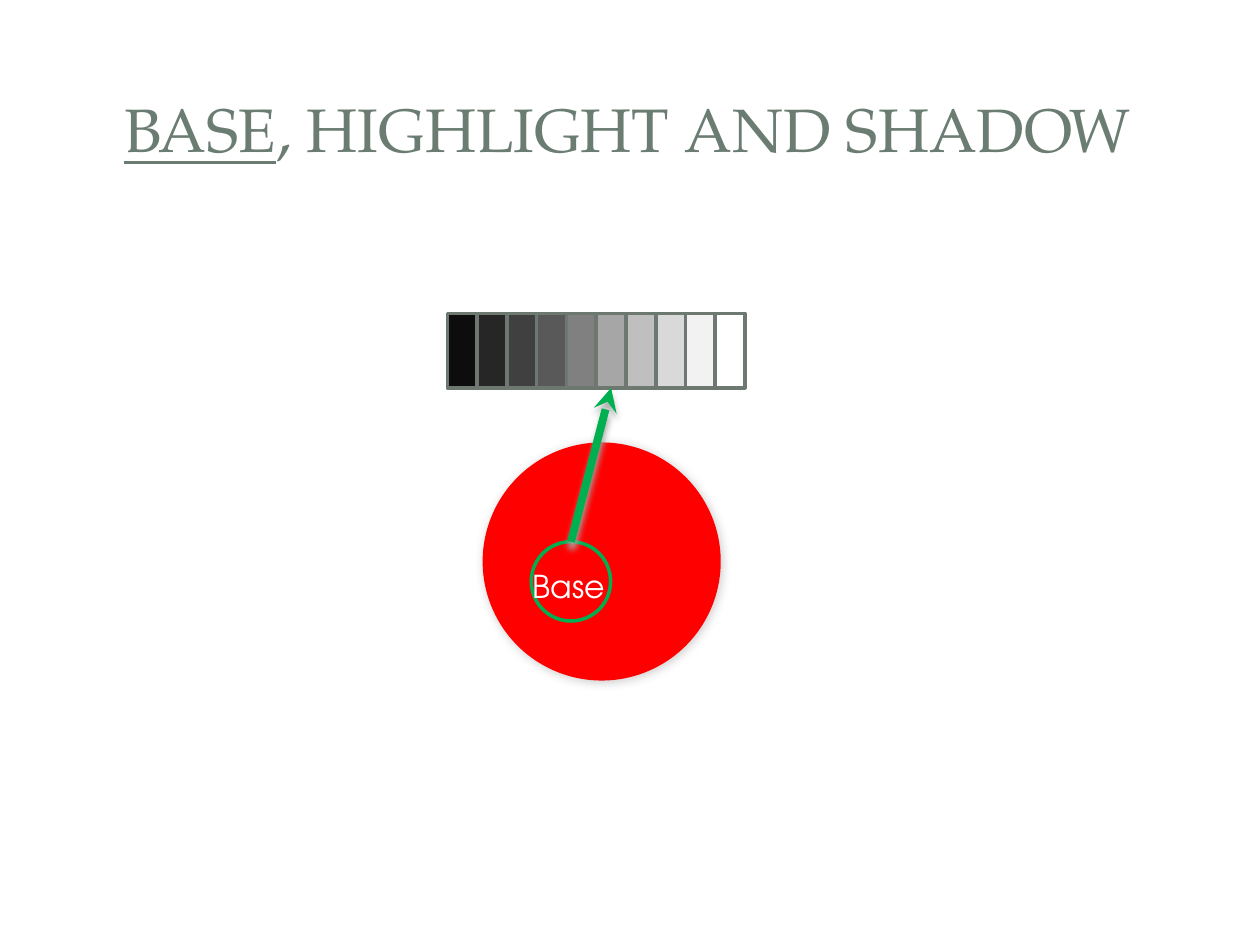
from lxml.etree import SubElement
from pptx import Presentation
from pptx.dml.color import RGBColor
from pptx.enum.shapes import MSO_CONNECTOR, MSO_SHAPE
from pptx.enum.text import MSO_ANCHOR, MSO_AUTO_SIZE, PP_ALIGN
from pptx.oxml.ns import qn
from pptx.util import Cm, Pt


def paint(color, code):
    color.rgb = RGBColor.from_string(code)


def write(para, text, font, size, code, under=False):
    run = para.add_run()
    run.text = text
    run.font.name = font
    run.font.size = Pt(size)
    run.font.underline = under
    paint(run.font.color, code)


GREEN = "00B050"
prs = Presentation()
prs.slide_width, prs.slide_height = Cm(25.4), Cm(19.05)
slide = prs.slides.add_slide(prs.slide_layouts[5])
shapes = slide.shapes

# Title
title = shapes.title
title.left, title.top, title.width, title.height = Cm(1.19), Cm(1.14), Cm(22.94), Cm(2.9)
title.text_frame.vertical_anchor = MSO_ANCHOR.MIDDLE
para = title.text_frame.paragraphs[0]
para.alignment = PP_ALIGN.CENTER
for text, under in (("BASE", True), (", HIGHLIGHT AND SHADOW", False)):
    write(para, text, font="TeX Gyre Pagella", size=35, code="6B7D72", under=under)

# Red ball
ball = shapes.add_shape(MSO_SHAPE.OVAL, Cm(9.73), Cm(8.92), Cm(4.8), Cm(4.8))
ball.shadow.inherit = False
ball.fill.solid()
paint(ball.fill.fore_color, "FF0000")
ball.line.fill.background()

# Value scale from dark to light
scale = shapes.add_group_shape()
tones = ["0D0D0D", "262626", "404040", "595959", "808080",
         "A6A6A6", "BFBFBF", "D9D9D9", "F2F2F2", "FFFFFF"]
cells = []
for i, tone in enumerate(tones):
    cell = scale.shapes.add_shape(MSO_SHAPE.RECTANGLE, Cm(9.02 + 0.6 * i), Cm(6.32), Cm(0.6), Cm(1.5))
    cell.shadow.inherit = False
    cell.fill.solid()
    paint(cell.fill.fore_color, tone)
    paint(cell.line.color, "6D7871")
    cell.line.width = Pt(2)
    cells.append(cell)

# Ring around the base tone
ring = shapes.add_shape(MSO_SHAPE.OVAL, Cm(10.71), Cm(10.92), Cm(1.6), Cm(1.6))
ring.shadow.inherit = False
ring.fill.background()
paint(ring.line.color, GREEN)
ring.line.width = Pt(2)

# Arrow from the ring to its tone
arrow = shapes.add_connector(MSO_CONNECTOR.STRAIGHT, 0, 0, 0, 0)
arrow.begin_connect(ring, 0)
arrow.end_connect(cells[5], 2)
paint(arrow.line.color, GREEN)
arrow.line.width = Pt(4.5)
SubElement(arrow.line._get_or_add_ln(), qn("a:tailEnd"), type="stealth")
SubElement(arrow._element.spPr, qn("a:effectLst"))

# Soft shadows: colour, opacity %, blur, distance, angle
for shape, code, alpha, blur, dist, angle in ((ball, "000000", 20, 6, 1, 45),
                                              (arrow, "A6A6A6", 100, 4, 4, 90)):
    effects = shape._element.spPr.find(qn("a:effectLst"))
    shade = SubElement(effects, qn("a:outerShdw"), blurRad=str(Pt(blur)), dist=str(Pt(dist)),
                       dir=str(angle * 60000), algn="ctr", rotWithShape="0")
    color = SubElement(shade, qn("a:srgbClr"), val=code)
    SubElement(color, qn("a:alpha"), val=str(alpha * 1000))

# Label
label = shapes.add_textbox(Cm(10.49), Cm(11.3), Cm(1.98), Cm(1.02))
label.text_frame.word_wrap = False
label.text_frame.auto_size = MSO_AUTO_SIZE.SHAPE_TO_FIT_TEXT
write(label.text_frame.paragraphs[0], "Base", font="TeX Gyre Adventor", size=18, code="FFFFFF")

prs.save("out.pptx")
